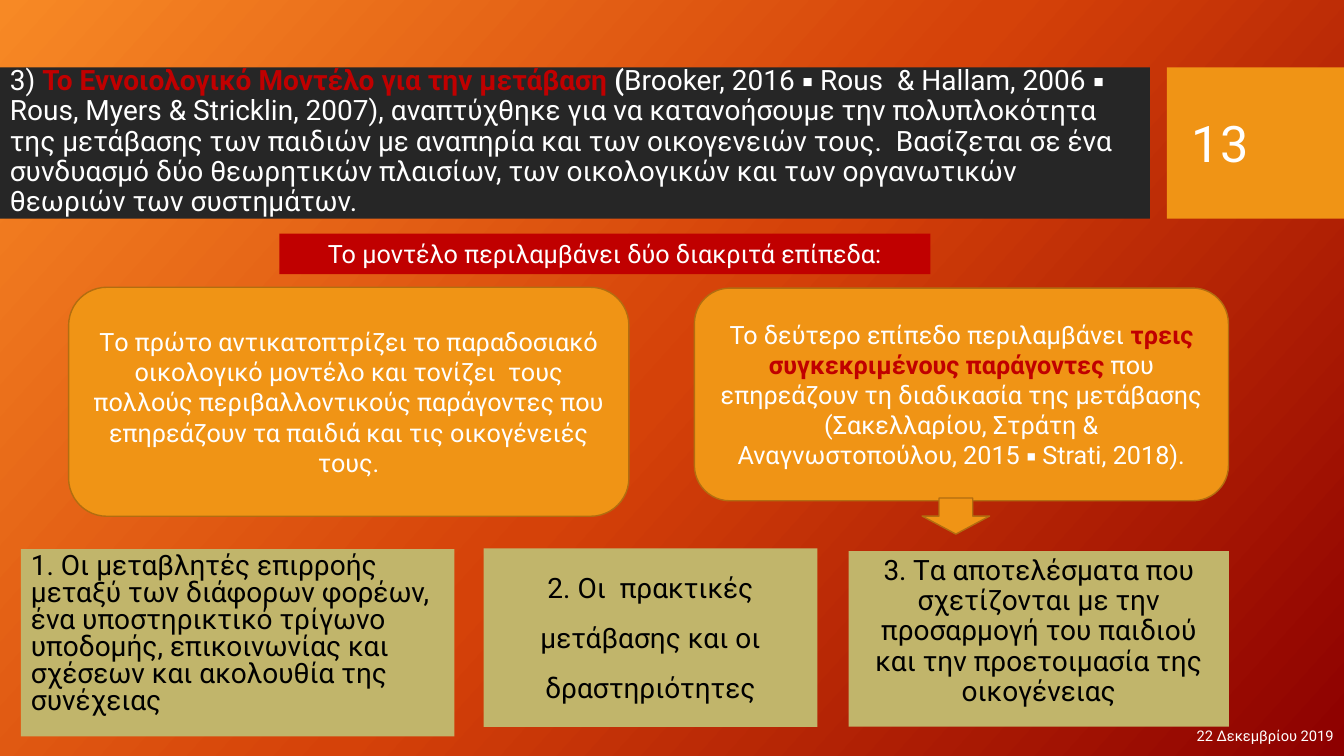
"""Build a slide on the conceptual model of transition and its two levels."""
import copy

import pptx
import pptx.dml.color
import pptx.enum.shapes
import pptx.enum.text
import pptx.util

Cm = pptx.util.Cm
Pt = pptx.util.Pt
RGB = pptx.dml.color.RGBColor.from_string
SHAPE = pptx.enum.shapes.MSO_SHAPE
ALIGN = pptx.enum.text.PP_ALIGN
ANCHOR = pptx.enum.text.MSO_ANCHOR

COLORS = {
    "glow": "F78925",
    "flame": "D54209",
    "ember": "8D0000",
    "dark": "262626",
    "orange": "F09415",
    "outline": "B26D10",
    "red": "C00000",
    "khaki": "C1B56B",
    "white": "FFFFFF",
    "black": "000000",
}


def add_box(s, preset, place, fill, line=None):
    """Add a filled shape without a shadow."""
    sp = s.shapes.add_shape(preset, *map(Cm, place))
    sp.shadow.inherit = False
    sp.fill.solid()
    sp.fill.fore_color.rgb = RGB(COLORS[fill])
    if line:
        sp.line.color.rgb = RGB(COLORS[line])
        sp.line.width = Pt(1)
    else:
        sp.line.fill.background()
    return sp


def write(sp, runs, size, align=ALIGN.LEFT, anchor=ANCHOR.MIDDLE, spacing=1.0):
    """Fill a shape with one paragraph of (text, colour, bold) runs."""
    tf = sp.text_frame
    tf.word_wrap = True
    tf.vertical_anchor = anchor
    p = tf.paragraphs[0]
    p.alignment = align
    p.line_spacing = spacing
    for text, color, bold in runs:
        r = p.add_run()
        r.text = text
        r.font.name = "Roboto"
        r.font.size = Pt(size)
        r.font.bold = bold
        r.font.color.rgb = RGB(COLORS[color])


prs = pptx.Presentation()
prs.slide_width = Cm(33.87)
prs.slide_height = Cm(19.05)
s = prs.slides.add_slide(prs.slide_layouts[6])

fill = s.background.fill
fill.gradient()
fill.gradient_angle = 318
stops = s.element.xpath(".//a:gsLst")[0]
stops.append(copy.deepcopy(stops[0]))
for stop, position, color in zip(fill.gradient_stops, (0, 0.5, 1), ("glow", "flame", "ember")):
    stop.position = position
    stop.color.rgb = RGB(COLORS[color])

add_box(s, SHAPE.RECTANGLE, (0, 1.7, 28.98, 3.81), "dark")
add_box(s, SHAPE.RECTANGLE, (29.41, 1.7, 4.46, 3.81), "orange")

title = [
    ("3) ", "white", False),
    ("Το Εννοιολογικό Μοντέλο για την μετάβαση ", "red", True),
    ("(", "white", True),
    ("Brooker, 2016 ▪ Rous  & Hallam, 2006 ▪ Rous, Myers & Stricklin, 2007), "
     "αναπτύχθηκε για να κατανοήσουμε την πολυπλοκότητα της μετάβασης των παιδιών "
     "με αναπηρία και των οικογενειών τους.  Βασίζεται σε ένα συνδυασμό δύο "
     "θεωρητικών πλαισίων, των οικολογικών και των οργανωτικών θεωριών των "
     "συστημάτων.", "white", False),
]
labels = [
    ((0, 2.08, 28.93, 3), title, 20, ALIGN.LEFT, 0.9),
    ((29.79, 2.08, 3.2, 3.02), [("13", "white", False)], 36, ALIGN.LEFT, 1.0),
    ((26.24, 18.03, 7.62, 1.02), [("22 Δεκεμβρίου 2019", "white", False)], 10.5, ALIGN.RIGHT, 1.0),
]
for place, runs, size, align, spacing in labels:
    write(s.shapes.add_textbox(*map(Cm, place)), runs, size, align, spacing=spacing)

banner = add_box(s, SHAPE.RECTANGLE, (7.04, 5.89, 16.41, 1.02), "red")
write(banner, [("Το μοντέλο περιλαμβάνει δύο διακριτά επίπεδα:", "white", False)],
      18, ALIGN.CENTER, ANCHOR.TOP)

levels = [
    ((1.73, 7.24, 14.12, 5.77), [
        ("Tο πρώτο αντικατοπτρίζει το παραδοσιακό οικολογικό μοντέλο και τονίζει  τους "
         "πολλούς περιβαλλοντικούς παράγοντες που επηρεάζουν τα παιδιά και τις "
         "οικογένειές τους.", "white", False)]),
    ((17.5, 7.26, 13.46, 5.36), [
        ("Το δεύτερο επίπεδο περιλαμβάνει ", "white", False),
        ("τρεις συγκεκριμένους παράγοντες", "red", True),
        (" που επηρεάζουν τη διαδικασία της μετάβασης (Σακελλαρίου, Στράτη & "
         "Αναγνωστοπούλου, 2015 ▪ Strati, 2018).", "white", False)]),
]
for place, runs in levels:
    sp = add_box(s, SHAPE.ROUNDED_RECTANGLE, place, "orange", "outline")
    write(sp, runs, 18, ALIGN.CENTER)

add_box(s, SHAPE.DOWN_ARROW, (23.24, 12.55, 1.7, 0.91), "orange", "outline")

factors = [
    ((0.53, 13.84, 10.92, 4.72), ALIGN.LEFT, 0.8,
     "1. Oι μεταβλητές επιρροής μεταξύ των διάφορων φορέων, ένα υποστηρικτικό τρίγωνο "
     "υποδομής, επικοινωνίας και σχέσεων και ακολουθία της συνέχειας"),
    ((12.19, 13.82, 8.41, 4.5), ALIGN.CENTER, 1.5,
     "2. Oι  πρακτικές μετάβασης και οι δραστηριότητες"),
    ((21.39, 13.89, 9.58, 4.42), ALIGN.CENTER, 0.9,
     "3. Tα αποτελέσματα που σχετίζονται με την προσαρμογή του παιδιού και την "
     "προετοιμασία της οικογένειας"),
]
for place, align, spacing, text in factors:
    sp = add_box(s, SHAPE.RECTANGLE, place, "khaki")
    write(sp, [(text, "black", False)], 20, align, ANCHOR.TOP, spacing)

prs.save("out.pptx")
